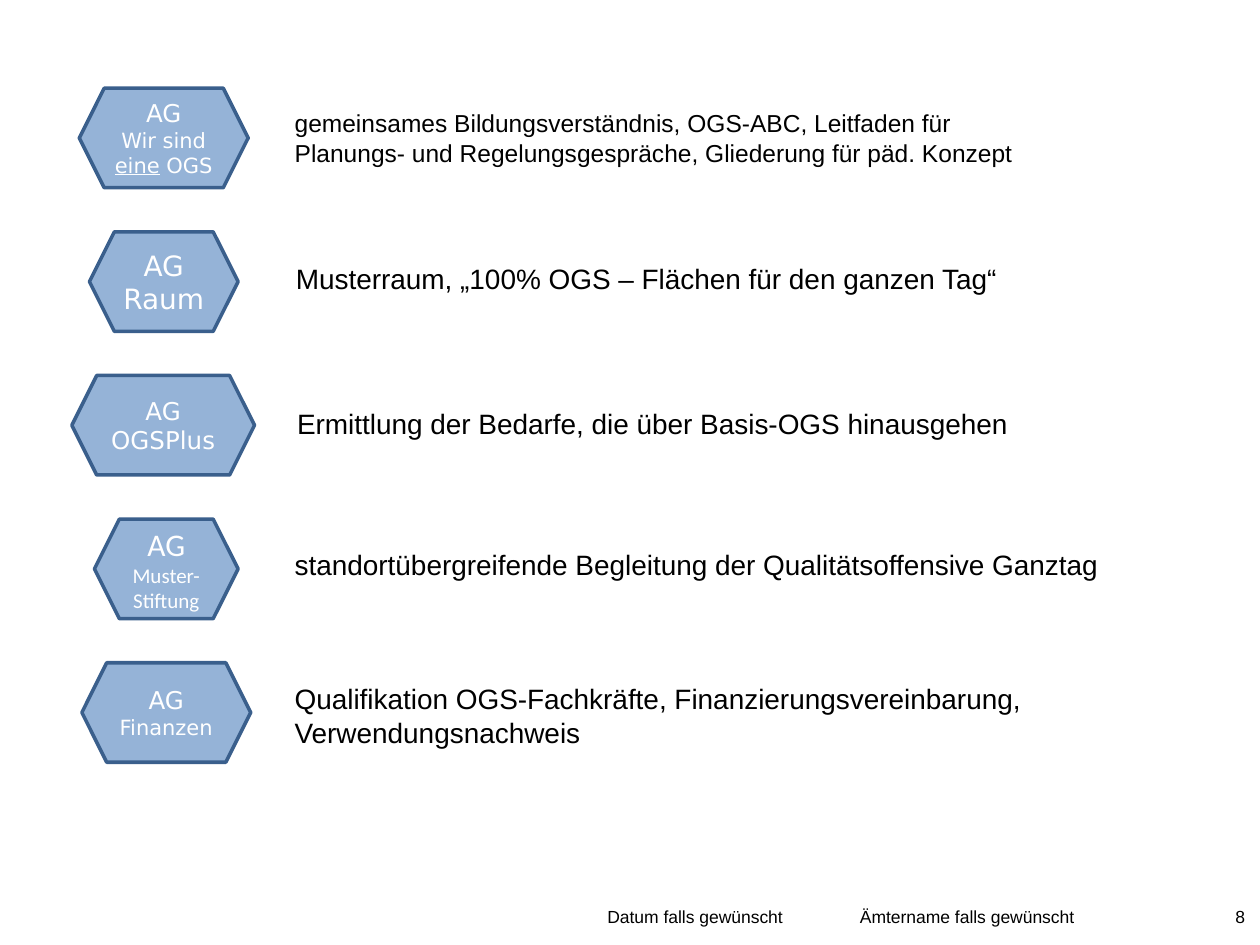
from dataclasses import dataclass

import pptx
import pptx.dml.color
import pptx.enum.shapes
import pptx.enum.text
import pptx.util

RGBColor = pptx.dml.color.RGBColor
Align = pptx.enum.text.PP_ALIGN
Anchor = pptx.enum.text.MSO_ANCHOR

BLACK = RGBColor(0x00, 0x00, 0x00)
WHITE = RGBColor(0xFF, 0xFF, 0xFF)
HEXAGON_FILL = RGBColor(0x95, 0xB3, 0xD7)
HEXAGON_LINE = RGBColor(0x3A, 0x5F, 0x8C)

# Grid: ten columns by seven and a half rows, one inch each
COLUMN = pptx.util.Inches(1)
ROW = pptx.util.Inches(1)
FIRST_ROW, ROW_STEP, HEXAGON_HEIGHT = 0.7, 1.14, 0.79
FOOTER_TOP, FOOTER_HEIGHT = 7.14, 0.36


@dataclass
class Line:
    text: str
    size: int
    underlined: str = ""


@dataclass
class WorkingGroup:
    left: float
    width: float
    label: list[Line]
    task: list[str]
    task_box: tuple[float, float, float, float]
    task_size: int = 16
    font: str = "DejaVu Sans"


@dataclass
class FooterItem:
    text: str
    left: float
    width: float
    alignment: Align


GROUPS = [
    WorkingGroup(0.63, 1.34, [Line("AG", 14), Line("Wir sind eine OGS", 12, "eine")],
                 ["gemeinsames Bildungsverständnis, OGS-ABC, Leitfaden für",
                  "Planungs- und Regelungsgespräche, Gliederung für päd. Konzept"],
                 (2.24, 0.81, 5.92, 0.57), task_size=14),
    WorkingGroup(0.71, 1.18, [Line("AG Raum", 16)],
                 ["Musterraum, „100% OGS – Flächen für den ganzen Tag“"],
                 (2.25, 2.03, 5.84, 0.37)),
    WorkingGroup(0.57, 1.45, [Line("AG", 14), Line("OGSPlus", 14)],
                 ["Ermittlung der Bedarfe, die über Basis-OGS hinausgehen"],
                 (2.26, 3.18, 5.86, 0.37)),
    WorkingGroup(0.75, 1.14, [Line("AG", 18), Line("Muster-Stiftung", 12)],
                 ["standortübergreifende Begleitung der Qualitätsoffensive Ganztag"],
                 (2.24, 4.3, 6.72, 0.37), font="Calibri"),
    WorkingGroup(0.65, 1.34, [Line("AG", 14), Line("Finanzen", 12)],
                 ["Qualifikation OGS-Fachkräfte, Finanzierungsvereinbarung,",
                  "Verwendungsnachweis"],
                 (2.24, 5.36, 6.1, 0.64)),
]

FOOTER = [
    FooterItem("Datum falls gewünscht", 3.27, 3.04, Align.RIGHT),
    FooterItem("Ämtername falls gewünscht", 6.34, 2.67, Align.CENTER),
    FooterItem("8", 9.02, 0.96, Align.RIGHT),
]


def place(left: float, top: float, width: float, height: float) -> tuple[int, ...]:
    return (int(left * COLUMN), int(top * ROW), int(width * COLUMN), int(height * ROW))


def write_lines(frame, lines: list[Line], font: str, color: RGBColor, alignment: Align) -> None:
    for index, line in enumerate(lines):
        paragraph = frame.paragraphs[0] if index == 0 else frame.add_paragraph()
        paragraph.alignment = alignment
        paragraph.font.name = font
        paragraph.font.size = pptx.util.Pt(line.size)
        paragraph.font.color.rgb = color
        if not line.underlined:
            paragraph.add_run().text = line.text
            continue
        for part in line.text.partition(line.underlined):
            run = paragraph.add_run()
            run.text = part
            if part == line.underlined:
                run.font.underline = True


def add_hexagon(slide, group: WorkingGroup, top: float) -> None:
    shape = slide.shapes.add_shape(pptx.enum.shapes.MSO_SHAPE.HEXAGON,
                                   *place(group.left, top, group.width, HEXAGON_HEIGHT))
    shape.shadow.inherit = False
    shape.fill.solid()
    shape.fill.fore_color.rgb = HEXAGON_FILL
    shape.line.color.rgb = HEXAGON_LINE
    shape.line.width = pptx.util.Pt(2)
    shape.text_frame.word_wrap = True
    shape.text_frame.vertical_anchor = Anchor.MIDDLE
    write_lines(shape.text_frame, group.label, group.font, WHITE, Align.CENTER)


def add_task(slide, group: WorkingGroup) -> None:
    frame = slide.shapes.add_textbox(*place(*group.task_box)).text_frame
    frame.word_wrap = False
    frame.auto_size = pptx.enum.text.MSO_AUTO_SIZE.SHAPE_TO_FIT_TEXT
    lines = [Line(text, group.task_size) for text in group.task]
    write_lines(frame, lines, "Arial", BLACK, Align.LEFT)


def add_footer_item(slide, item: FooterItem) -> None:
    box = slide.shapes.add_textbox(*place(item.left, FOOTER_TOP, item.width, FOOTER_HEIGHT))
    box.text_frame.word_wrap = True
    write_lines(box.text_frame, [Line(item.text, 10)], "Arial", BLACK, item.alignment)


def main() -> None:
    presentation = pptx.Presentation()
    presentation.slide_width = 10 * COLUMN
    presentation.slide_height = int(7.5 * ROW)
    slide = presentation.slides.add_slide(presentation.slide_layouts[6])

    # Footer
    for item in FOOTER:
        add_footer_item(slide, item)

    # Working groups with their tasks
    for index, group in enumerate(GROUPS):
        add_hexagon(slide, group, FIRST_ROW + index * ROW_STEP)
    for group in GROUPS:
        add_task(slide, group)

    presentation.save("out.pptx")


if __name__ == "__main__":
    main()
